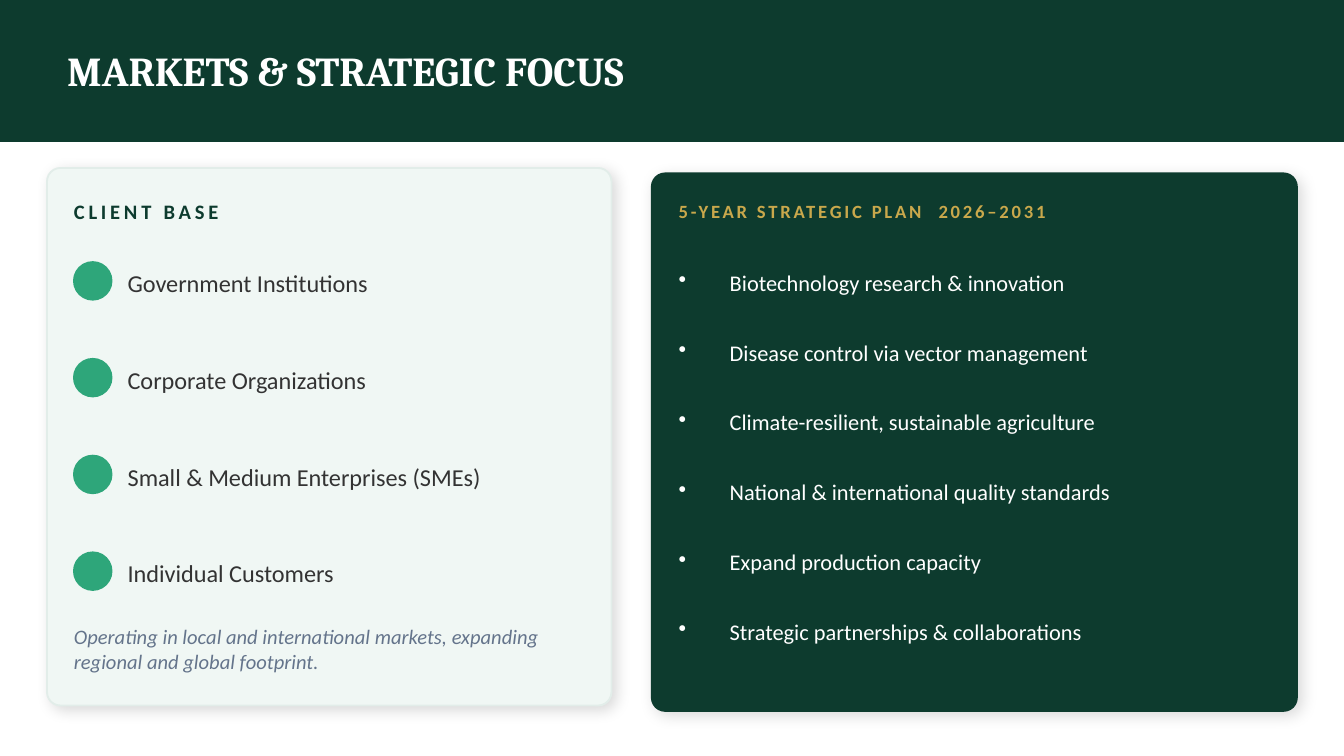
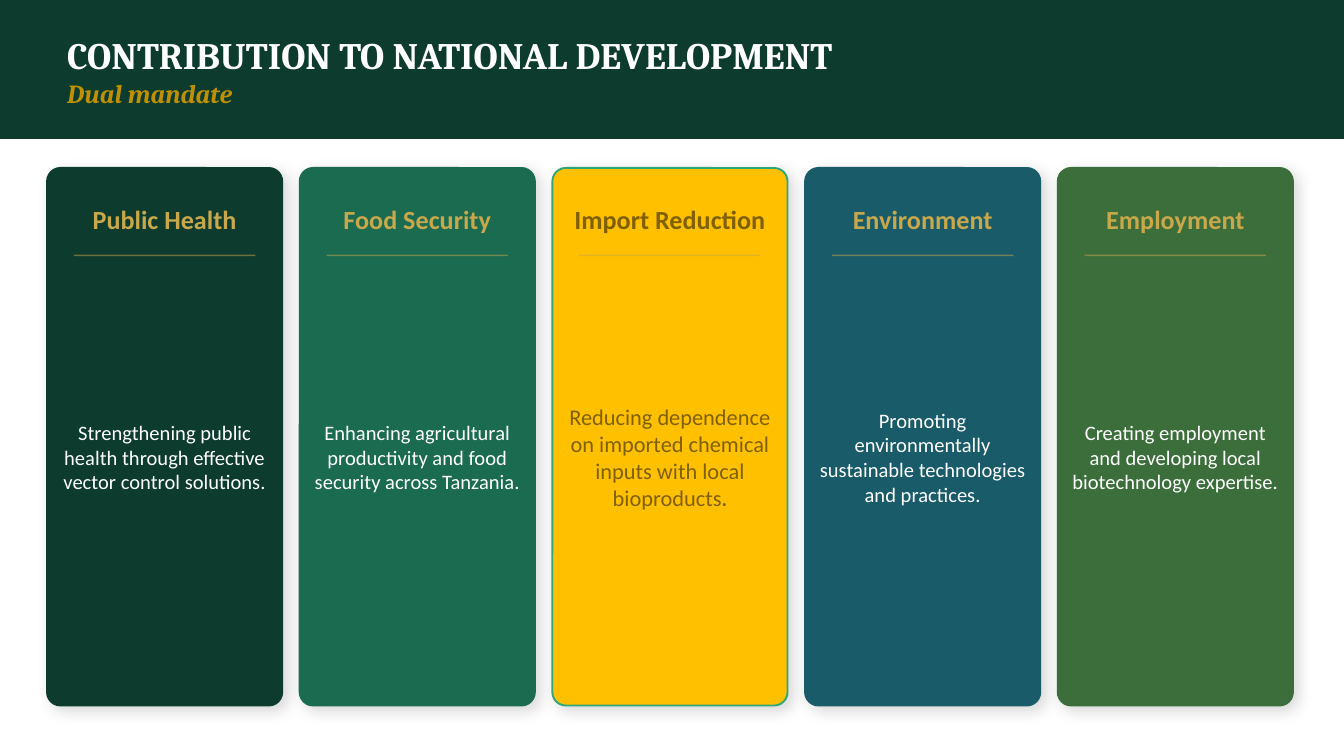
from dataclasses import dataclass
from typing import NamedTuple

import pptx
import pptx.dml.color
import pptx.enum.dml
import pptx.enum.shapes
import pptx.enum.text
import pptx.oxml
import pptx.oxml.ns
import pptx.util
from lxml import etree

Shape = pptx.enum.shapes.MSO_SHAPE
Align = pptx.enum.text.PP_ALIGN
qn = pptx.oxml.ns.qn

SLIDE_W = pptx.util.Inches(10)
SLIDE_H = pptx.util.Inches(5.625)
COLS, ROWS = 100, 56.25


@dataclass(frozen=True)
class Theme:
    heading: str = "Cambria"
    body: str = "Calibri"
    white: str = "FFFFFF"
    forest: str = "0D3B2E"
    mint: str = "F0F7F4"
    mint_edge: str = "E2EDE9"
    emerald: str = "2EA67A"
    gold: str = "C9A84C"
    ochre: str = "BF9000"
    amber: str = "FFC000"
    brown: str = "806000"
    jade: str = "1A6B50"
    teal: str = "1A5B6A"
    moss: str = "3B6E3A"
    ink: str = "333333"
    slate: str = "64748B"
    title_size: float = 22
    long_title_size: float = 20
    subtitle_size: float = 14
    heading_size: float = 14
    client_size: float = 13
    plan_size: float = 12
    label_size: float = 11
    small_label_size: float = 10


T = Theme()


class Box(NamedTuple):
    """Left and width in grid columns, top and height in grid rows."""
    left: float
    top: float
    width: float
    height: float

    def emu(self) -> tuple[int, int, int, int]:
        return col(self.left), row(self.top), col(self.width), row(self.height)


class Run(NamedTuple):
    text: str
    size: float
    color: str
    bold: bool = False
    italic: bool = False
    spacing: float = 0
    font: str = T.body


class Pillar(NamedTuple):
    name: str
    body: tuple[Run, ...]
    fill: str
    edge: str
    name_color: str = T.gold


def col(n: float) -> int:
    return round(SLIDE_W * n / COLS)


def row(n: float) -> int:
    return round(SLIDE_H * n / ROWS)


def rgb(value: str) -> pptx.dml.color.RGBColor:
    return pptx.dml.color.RGBColor.from_string(value)


def add_run(p, run: Run) -> None:
    r = p.add_run()
    r.text = run.text
    r.font.name = run.font
    r.font.size = pptx.util.Pt(run.size)
    r.font.color.rgb = rgb(run.color)
    r.font.bold = run.bold
    r.font.italic = run.italic
    if run.spacing:
        r._r.get_or_add_rPr().set("spc", str(round(run.spacing * 100)))


def set_frame(tf) -> None:
    """Wrap, centre vertically and drop the insets."""
    tf.word_wrap = True
    tf.auto_size = pptx.enum.text.MSO_AUTO_SIZE.NONE
    tf.vertical_anchor = pptx.enum.text.MSO_ANCHOR.MIDDLE
    tf.margin_left = tf.margin_top = tf.margin_right = tf.margin_bottom = 0


def add_bullet(p) -> None:
    indent = pptx.util.Inches(0.38)
    ppr = p._p.get_or_add_pPr()
    ppr.set("marL", str(indent))
    ppr.set("indent", str(-indent))
    etree.SubElement(ppr, qn("a:buChar")).set("char", "•")


def add_text(s, box: Box, *runs: Run, align: Align = Align.LEFT, bullet: bool = False) -> None:
    tf = s.shapes.add_textbox(*box.emu()).text_frame
    set_frame(tf)
    p = tf.paragraphs[0]
    p.alignment = align
    if bullet:
        add_bullet(p)
    for run in runs:
        add_run(p, run)


def add_shape(s, kind: Shape, box: Box, fill: str, edge: str):
    sp = s.shapes.add_shape(kind, *box.emu())
    sp.shadow.inherit = False
    sp.fill.solid()
    sp.fill.fore_color.rgb = rgb(fill)
    sp.line.color.rgb = rgb(edge)
    sp.line.width = pptx.util.Pt(1)
    return sp


def add_card(s, box: Box, fill: str, edge: str) -> None:
    """Rounded panel with one-grid-unit corners and a soft shadow."""
    sp = add_shape(s, Shape.ROUNDED_RECTANGLE, box, fill, edge)
    sp.adjustments[0] = 1 / min(box.width, box.height)
    effects = sp.element.spPr.find(qn("a:effectLst"))
    shadow = etree.SubElement(effects, qn("a:outerShdw"), blurRad=str(pptx.util.Pt(8)),
                              dist=str(pptx.util.Pt(3)), dir=str(45 * 60000),
                              algn="bl", rotWithShape="0")
    color = etree.SubElement(shadow, qn("a:srgbClr"), val="000000")
    etree.SubElement(color, qn("a:alpha"), val="15000")


def add_rule(s, left: float, top: float, width: float) -> None:
    line = s.shapes.add_connector(pptx.enum.shapes.MSO_CONNECTOR.STRAIGHT,
                                  col(left), row(top), col(left + width), row(top))
    line.line.color.rgb = rgb(T.gold)
    line.line.width = pptx.util.Pt(0.8)
    color = line.element.spPr.find(".//" + qn("a:srgbClr"))
    etree.SubElement(color, qn("a:alpha"), val="50000")
    etree.SubElement(line.element.spPr, qn("a:effectLst"))


def add_titled_slide(prs, *lines: Run, band_top: float = 0):
    s = prs.slides.add_slide(prs.slide_layouts.get_by_name("Title Only"))
    s.background.fill.solid()
    s.background.fill.fore_color.rgb = rgb(T.white)
    band = add_shape(s, Shape.RECTANGLE, Box(0, band_top, COLS, 10.5), T.forest, T.forest)
    title = s.shapes.title
    title.element.addprevious(band.element)
    title.left, title.top, title.width, title.height = Box(5, 0, 90, 10.5).emu()
    tf = title.text_frame
    set_frame(tf)
    for i, run in enumerate(lines):
        p = tf.add_paragraph() if i else tf.paragraphs[0]
        p.alignment = Align.LEFT
        add_run(p, run)
    return s


def title_run(text: str, size: float) -> Run:
    return Run(text, size, T.white, bold=True, font=T.heading)


CLIENTS = ("Government Institutions", "Corporate Organizations",
           "Small & Medium Enterprises (SMEs)", "Individual Customers")
PLAN = ("Biotechnology research & innovation", "Disease control via vector management",
        "Climate-resilient, sustainable agriculture",
        "National & international quality standards",
        "Expand production capacity", "Strategic partnerships & collaborations")


def build_markets(prs) -> None:
    s = add_titled_slide(prs, title_run("MARKETS & STRATEGIC FOCUS", T.title_size))

    add_card(s, Box(3.5, 12.5, 42, 40), T.mint, T.mint_edge)
    add_text(s, Box(5.5, 13.8, 38, 3.8),
             Run("CLIENT BASE", T.label_size, T.forest, bold=True, spacing=2))
    for i, client in enumerate(CLIENTS):
        top = 19.5 + 7.2 * i
        add_shape(s, Shape.OVAL, Box(5.5, top, 2.8, 2.8), T.emerald, T.emerald)
        add_text(s, Box(9.5, top - 0.2, 33, 3.5), Run(client, T.client_size, T.ink))
    add_text(s, Box(5.5, 45.5, 38, 5.5),
             Run("Operating in local and international markets, expanding regional "
                 "and global footprint.", T.label_size, T.slate, italic=True))

    add_card(s, Box(48.5, 12.9, 48, 40), T.forest, T.forest)
    label = Run("5-YEAR STRATEGIC PLAN", T.small_label_size, T.gold, bold=True, spacing=1.5)
    add_text(s, Box(50.5, 13.8, 44, 3.8), label,
             label._replace(text=" ", spacing=5.25), label._replace(text="2026–2031"))
    for i, goal in enumerate(PLAN):
        add_text(s, Box(50.5, 18.8 + 5.2 * i, 44, 4.4),
                 Run(goal, T.plan_size, T.white), bullet=True)


def pillar(name: str, body: str, fill: str) -> Pillar:
    return Pillar(name, (Run(body, T.label_size, T.white),), fill, fill)


PILLARS = (
    pillar("Public Health",
           "Strengthening public health through effective vector control solutions.", T.forest),
    pillar("Food Security",
           "Enhancing agricultural productivity and food security across Tanzania.", T.jade),
    Pillar("Import Reduction",
           (Run("Reducing dependence on imported chemical inputs with local bioproducts",
                T.plan_size, T.brown),
            Run(".", T.label_size, T.brown, bold=True)),
           T.amber, T.emerald, T.brown),
    pillar("Environment",
           "Promoting environmentally sustainable technologies and practices.", T.teal),
    pillar("Employment",
           "Creating employment and developing local biotechnology expertise.", T.moss),
)


def build_contribution(prs) -> None:
    s = add_titled_slide(
        prs, title_run("CONTRIBUTION TO NATIONAL DEVELOPMENT", T.long_title_size),
        Run("Dual mandate", T.subtitle_size, T.ochre, True, True, font=T.heading),
        band_top=-0.2)
    width, gap = 17.5, 1.3
    for i, item in enumerate(PILLARS):
        left = 3.5 + i * (width + gap)
        add_card(s, Box(left, 12.5, width, 40), item.fill, item.edge)
        add_text(s, Box(left + 1, 13.8, width - 2, 5),
                 Run(item.name, T.heading_size, item.name_color, bold=True),
                 align=Align.CENTER)
        add_rule(s, left + 2, 19, width - 4)
        add_text(s, Box(left + 1, 20, width - 2, 28), *item.body, align=Align.CENTER)


def main() -> None:
    prs = pptx.Presentation()
    prs.slide_width, prs.slide_height = SLIDE_W, SLIDE_H
    build_markets(prs)
    build_contribution(prs)
    prs.save("out.pptx")


if __name__ == "__main__":
    main()
